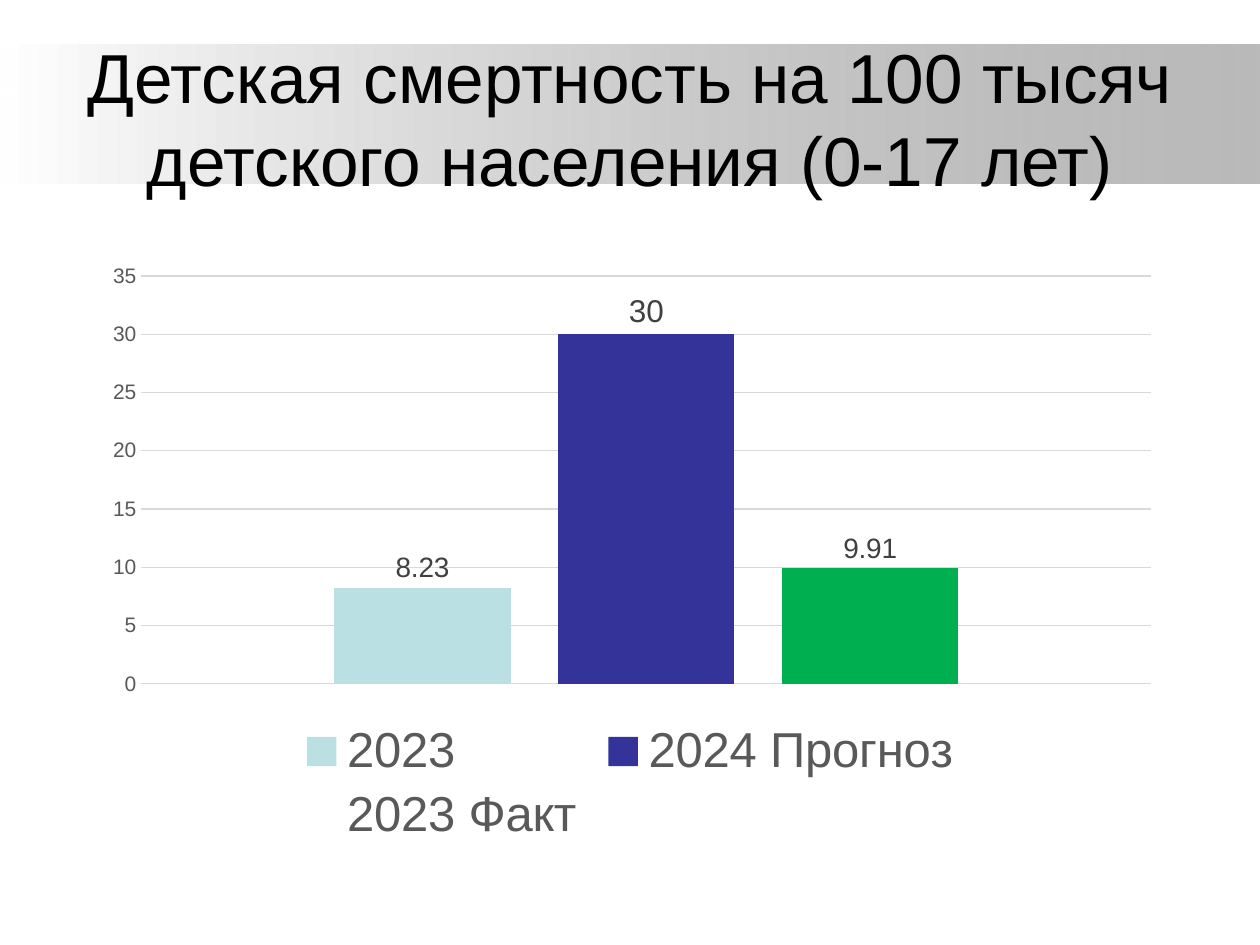
from lxml import etree
from pptx import Presentation
from pptx.chart.data import CategoryChartData
from pptx.dml.color import RGBColor
from pptx.enum.chart import XL_CHART_TYPE, XL_LABEL_POSITION, XL_LEGEND_POSITION, XL_TICK_MARK
from pptx.enum.shapes import MSO_SHAPE
from pptx.enum.text import MSO_ANCHOR, PP_ALIGN
from pptx.oxml import parse_xml
from pptx.oxml.ns import nsdecls, qn
from pptx.util import Emu, Pt

COLUMNS = XL_CHART_TYPE.COLUMN_CLUSTERED
OUTSIDE_END = XL_LABEL_POSITION.OUTSIDE_END
BOTTOM = XL_LEGEND_POSITION.BOTTOM
NO_TICK = XL_TICK_MARK.NONE
RECTANGLE = MSO_SHAPE.RECTANGLE
MIDDLE = MSO_ANCHOR.MIDDLE
CENTER = PP_ALIGN.CENTER

PX_PER_INCH = 126
FONT = "Arial"
TITLE = "Детская смертность на 100 тысяч детского населения (0-17 лет)"
# name, value, series colour, column colour, label size
SERIES = [
    ("2023", 8.23, "BBE0E3", "BBE0E3", 16),
    ("2024 Прогноз", 30, "333399", "333399", 18),
    ("2023 Факт", 9.91, "FFFFFF", "00B050", 16),
]


def px(length):
    return Emu(round(length * 914400 / PX_PER_INCH))


def color(value):
    return RGBColor.from_string(value)


def style_font(font, size, value):
    font.name = FONT
    font.size = Pt(size)
    font.color.rgb = color(value)


def paint(fill, value):
    fill.solid()
    fill.fore_color.rgb = color(value)


def add_band(page, left, top, width, height):
    """Bar that fades from white to half-transparent grey."""
    band = page.shapes.add_shape(RECTANGLE, px(left), px(top), px(width), px(height))
    band.shadow.inherit = False
    band.line.fill.background()
    band.fill.gradient()
    band.fill.gradient_angle = 0
    for stop, value in zip(band.fill.gradient_stops, ("FFFFFF", "808080")):
        stop.color.rgb = color(value)
    grey = list(band._element.iter(qn("a:srgbClr")))[-1]
    etree.SubElement(grey, qn("a:alpha")).set("val", "54000")


def add_title(page, left, top, width, height):
    box = page.shapes.add_textbox(px(left), px(top), px(width), px(height))
    frame = box.text_frame
    frame.word_wrap = True
    frame.vertical_anchor = MIDDLE
    frame.text = TITLE
    para = frame.paragraphs[0]
    para.alignment = CENTER
    style_font(para.runs[0].font, 39.6, "000000")


def place_plot(chart, left, top, width, height):
    """Fix the inner plot area, in fractions of the chart."""
    plot_area = chart._chartSpace.chart.plotArea
    for layout in plot_area.findall(qn("c:layout")):
        plot_area.remove(layout)
    sides = "".join(f'<c:{name} val="{value}"/>' for name, value in
                    (("x", left), ("y", top), ("w", width), ("h", height)))
    plot_area.insert(0, parse_xml(
        f'<c:layout {nsdecls("c")}><c:manualLayout><c:layoutTarget val="inner"/>'
        f'<c:xMode val="edge"/><c:yMode val="edge"/>{sides}</c:manualLayout></c:layout>'))


def style_value_axis(axis):
    axis.minimum_scale, axis.maximum_scale, axis.major_unit = 0, 35, 5
    axis.major_tick_mark = axis.minor_tick_mark = NO_TICK
    axis.format.line.fill.background()
    style_font(axis.tick_labels.font, 12, "595959")
    grid = axis.major_gridlines.format.line
    grid.color.rgb = color("D9D9D9")
    grid.width = Pt(0.75)


def add_mortality_chart(page, left, top, width, height):
    data = CategoryChartData()
    data.categories = ["1"]
    for name, value, *_ in SERIES:
        data.add_series(name, [value])
    chart = page.shapes.add_chart(
        COLUMNS, px(left), px(top), px(width), px(height), data).chart
    chart.has_title = False
    style_font(chart.font, 10, "000000")
    place_plot(chart, 0.05, 0.04, 0.93, 0.68)

    plot = chart.plots[0]
    plot.gap_width, plot.overlap = 219, -27
    plot.vary_by_categories = False
    for series, (_, _, series_color, column_color, size) in zip(plot.series, SERIES):
        paint(series.format.fill, series_color)
        if column_color != series_color:
            paint(series.points[0].format.fill, column_color)
        labels = series.data_labels
        labels.show_value = True
        labels.position = OUTSIDE_END
        style_font(labels.font, size, "404040")

    chart.category_axis.visible = False
    style_value_axis(chart.value_axis)
    chart.has_legend = True
    chart.legend.position = BOTTOM
    chart.legend.include_in_layout = False
    style_font(chart.legend.font, 28, "595959")


def main():
    deck = Presentation()
    deck.slide_width, deck.slide_height = px(1260), px(945)
    page = deck.slides.add_slide(deck.slide_layouts[6])
    add_band(page, 0, 45, 1260, 139)
    add_title(page, 63, 38, 1134, 158)
    add_mortality_chart(page, 87, 252, 1086, 600)
    deck.save("out.pptx")


if __name__ == "__main__":
    main()
